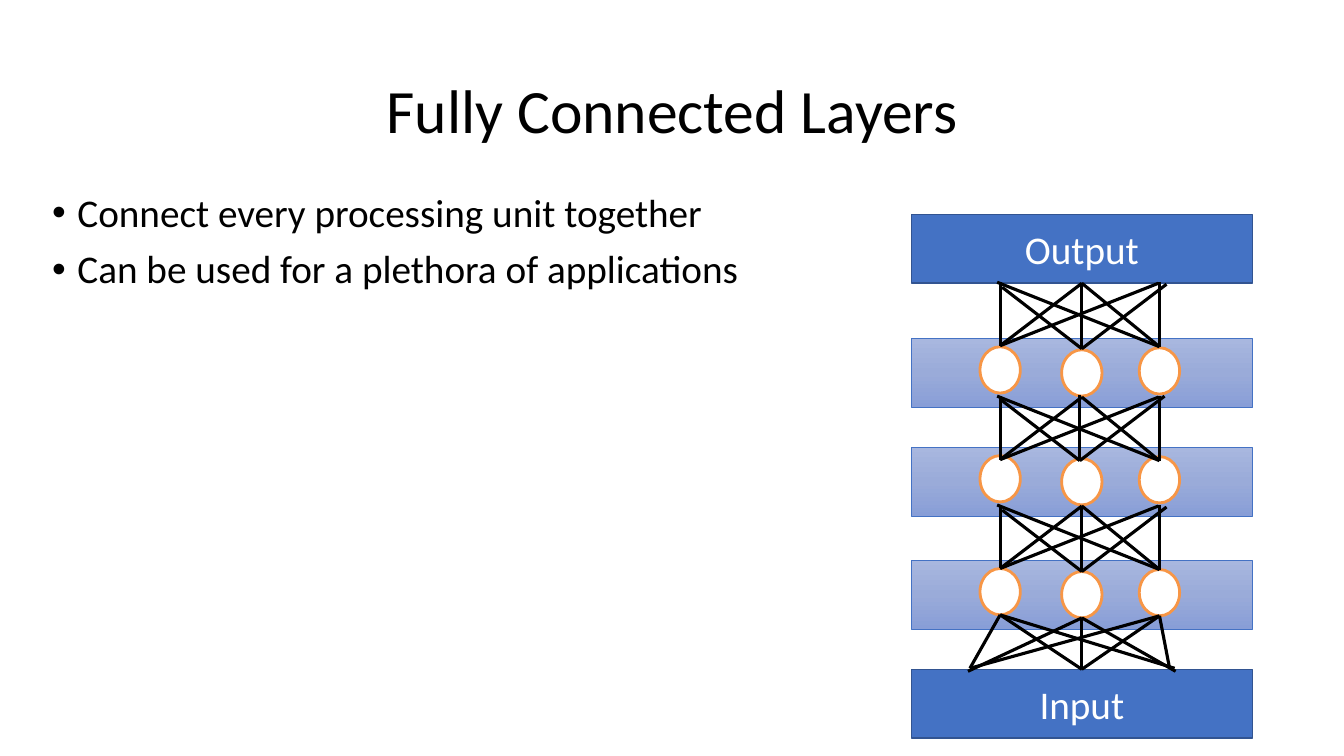
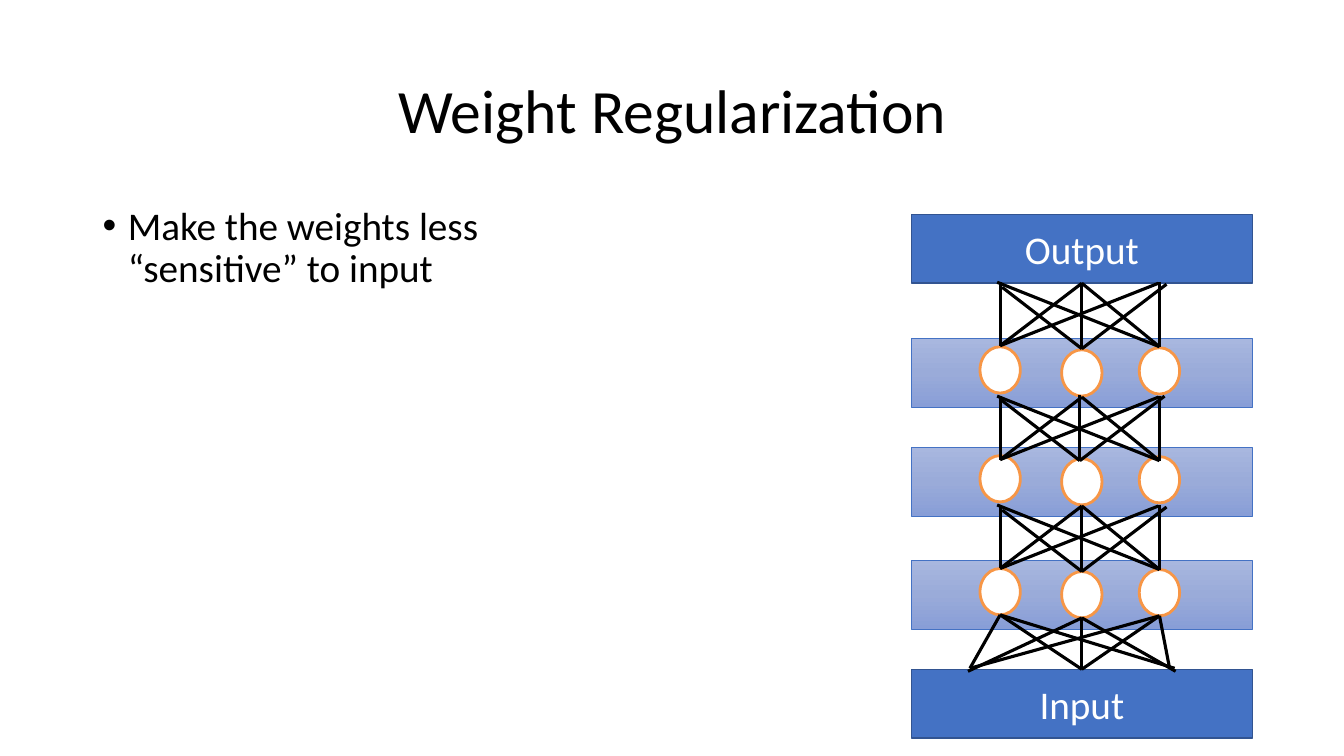
from copy import deepcopy
from dataclasses import dataclass

from pptx import Presentation
from pptx.dml.color import RGBColor
from pptx.enum.shapes import MSO_CONNECTOR as Wire, MSO_SHAPE as Form
from pptx.enum.text import MSO_ANCHOR as Anchor, PP_ALIGN as Align
from pptx.oxml import parse_xml
from pptx.oxml.ns import nsdecls, qn
from pptx.shapes.autoshape import Shape
from pptx.slide import Slide
from pptx.text.text import TextFrame
from pptx.util import Emu, Pt

SCALE = 9144  # EMU in one px, 100 px to the inch
FONT = "Calibri"
COLORS = {
    "ink": "000000",
    "white": "FFFFFF",
    "blue": "4472C4",
    "navy": "325491",
    "orange": "F79646",
    "fade": ("A8B7DF", "9AABD9", "889ED7"),
}

Point = tuple[int, int]


@dataclass(frozen=True)
class Area:
    x: int
    y: int
    w: int
    h: int


@dataclass(frozen=True)
class Fan:
    """Lines from one unit to the three points it feeds."""
    root: Point
    tips: tuple[Point, Point, Point]


@dataclass(frozen=True)
class Page:
    title: str
    body: Area
    points: tuple[str, ...]


HEAD = Area(92, 40, 1150, 145)
BAND_X, BAND_W, BAND_H = 904, 338, 68
MID_X = BAND_X + BAND_W // 2
OUT_Y, IN_Y = 213, 664
ROWS = (336, 444, 556)
UNITS = ((972, 8), (1053, 11), (1130, 9))  # left edge, drop below band top
UNIT_W, UNIT_H = 40, 46

# Upper fans, with y counted from the top of the left unit
MESH = (
    Fan((992, 0), ((992, -63), (MID_X, -62), (1149, -62))),
    Fan((MID_X, 3), ((994, -58), (MID_X, -62), (1157, -61))),
    Fan((1150, 1), ((989, -63), (MID_X, -62), (1150, -63))),
)
MESH_Y = ((343, 0), (456, -2), (564, 0))  # top, shift of the middle fan
BASE = (
    Fan((992, 610), ((962, 663), (MID_X, IN_Y), (1165, 663))),
    Fan((MID_X, 613), ((960, 666), (MID_X, IN_Y), (1166, 666))),
    Fan((1150, 611), ((962, 663), (MID_X, IN_Y), (1160, 663))),
)

PAGES = (
    Page("Fully Connected Layers", Area(42, 187, 726, 523),
         ("Connect every processing unit together",
          "Can be used for a plethora of applications")),
    Page("Weight Regularization", Area(92, 200, 477, 466),
         ("Make the weights less “sensitive” to input",)),
)


def px(size: int) -> Emu:
    return Emu(size * SCALE)


def rgb(code: str) -> RGBColor:
    return RGBColor.from_string(code)


def frame(area: Area) -> tuple[Emu, Emu, Emu, Emu]:
    return px(area.x), px(area.y), px(area.w), px(area.h)


def write(box: TextFrame, *lines: str, size: int = 28, color: str = "ink",
          align: Align = Align.CENTER, anchor: Anchor = Anchor.MIDDLE,
          lead: float = 1.0, gap: int = 0, bullet: bool = False) -> None:
    box.word_wrap = True
    box.vertical_anchor = anchor
    for num, line in enumerate(lines):
        para = box.add_paragraph() if num else box.paragraphs[0]
        if bullet:
            props = para._p.get_or_add_pPr()
            props.set("marL", str(px(25)))
            props.set("indent", str(px(-25)))
            props.append(parse_xml(
                f'<a:buFont {nsdecls("a")} typeface="Arial"/>'))
            props.append(parse_xml(f'<a:buChar {nsdecls("a")} char="•"/>'))
        para.alignment = align
        para.line_spacing = lead
        if num:
            para.space_before = Pt(gap)
        run = para.add_run()
        run.text = line
        run.font.name = FONT
        run.font.size = Pt(size)
        run.font.color.rgb = rgb(COLORS[color])


def draw(slide: Slide, form: Form, area: Area, fill: str, edge: str,
         width: float) -> Shape:
    shape = slide.shapes.add_shape(form, *frame(area))
    shape.shadow.inherit = False
    shape.line.color.rgb = rgb(COLORS[edge])
    shape.line.width = Pt(width)
    if fill == "fade":
        shade(shape)
    else:
        shape.fill.solid()
        shape.fill.fore_color.rgb = rgb(COLORS[fill])
    return shape


def shade(shape: Shape) -> None:
    """Fill with the three-stop fade, top to bottom."""
    shape.fill.gradient()
    shape.fill.gradient_angle = 270
    stops = shape._element.spPr.find(qn("a:gradFill")).find(qn("a:gsLst"))
    stops.insert(1, deepcopy(stops[0]))
    for num, code in enumerate(COLORS["fade"]):
        stop = shape.fill.gradient_stops[num]
        stop.position = num / 2
        stop.color.rgb = rgb(code)


def block(slide: Slide, top: int, label: str) -> Shape:
    area = Area(BAND_X, top, BAND_W, BAND_H)
    shape = draw(slide, Form.RECTANGLE, area, "blue", "navy", 1)
    write(shape.text_frame, label, color="white")
    return shape


def layer(slide: Slide, top: int) -> None:
    area = Area(BAND_X, top, BAND_W, BAND_H)
    draw(slide, Form.RECTANGLE, area, "fade", "blue", 0.5)
    for left, drop in UNITS:
        unit = Area(left, top + drop, UNIT_W, UNIT_H)
        draw(slide, Form.OVAL, unit, "white", "orange", 2)


def spread(slide: Slide, fan: Fan,
           joints: dict[Point, tuple[Shape, int]]) -> None:
    """Draw a fan, joining each tip that lies on a joint."""
    for tip in fan.tips:
        ends = [px(val) for val in (*fan.root, *tip)]
        line = slide.shapes.add_connector(Wire.STRAIGHT, *ends)
        line.line.color.rgb = rgb(COLORS["ink"])
        line.line.width = Pt(2.25)
        line._element.spPr.append(
            parse_xml(f'<a:effectLst {nsdecls("a")}/>'))
        if tip in joints:
            line.end_connect(*joints[tip])


def move(fan: Fan, dx: int, dy: int) -> Fan:
    root, *tips = ((x + dx, y + dy) for x, y in (fan.root, *fan.tips))
    return Fan(root, tuple(tips))


def network(slide: Slide) -> None:
    for top in ROWS:
        layer(slide, top)
    joints = {
        (MID_X, OUT_Y + BAND_H): (block(slide, OUT_Y, "Output"), 2),
        (MID_X, IN_Y): (block(slide, IN_Y, "Input"), 0),
    }
    for top, shift in MESH_Y:
        for num, fan in enumerate(MESH):
            nudge = shift if num == 1 else 0
            spread(slide, move(fan, nudge, top + nudge), joints)
    for fan in BASE:
        spread(slide, fan, joints)


def build(slide: Slide, page: Page) -> None:
    head = slide.shapes.add_textbox(*frame(HEAD))
    write(head.text_frame, page.title, size=44, lead=0.9)
    body = slide.shapes.add_textbox(*frame(page.body))
    write(body.text_frame, *page.points, align=Align.LEFT,
          anchor=Anchor.TOP, lead=0.9, gap=10, bullet=True)
    network(slide)


def main() -> None:
    deck = Presentation()
    deck.slide_width, deck.slide_height = px(1333), px(750)
    for page in PAGES:
        build(deck.slides.add_slide(deck.slide_layouts[6]), page)
    deck.save("out.pptx")


if __name__ == "__main__":
    main()
